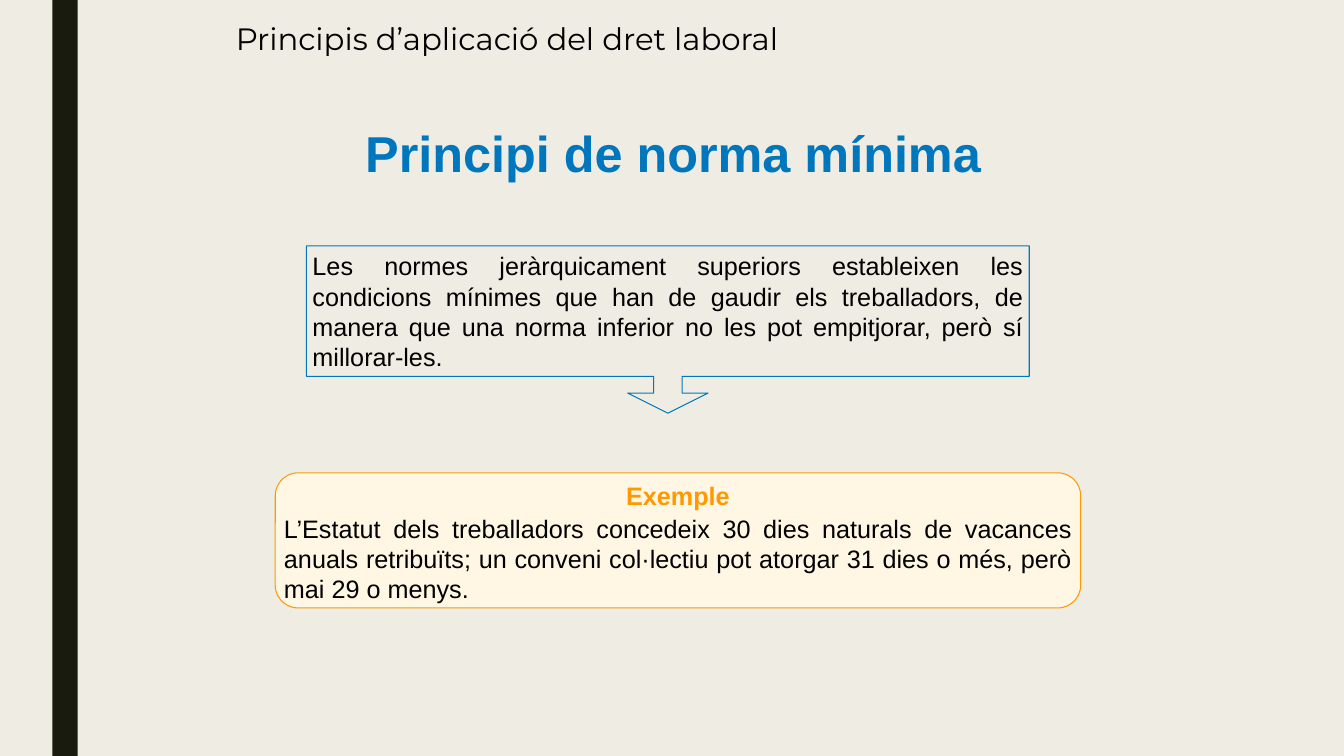
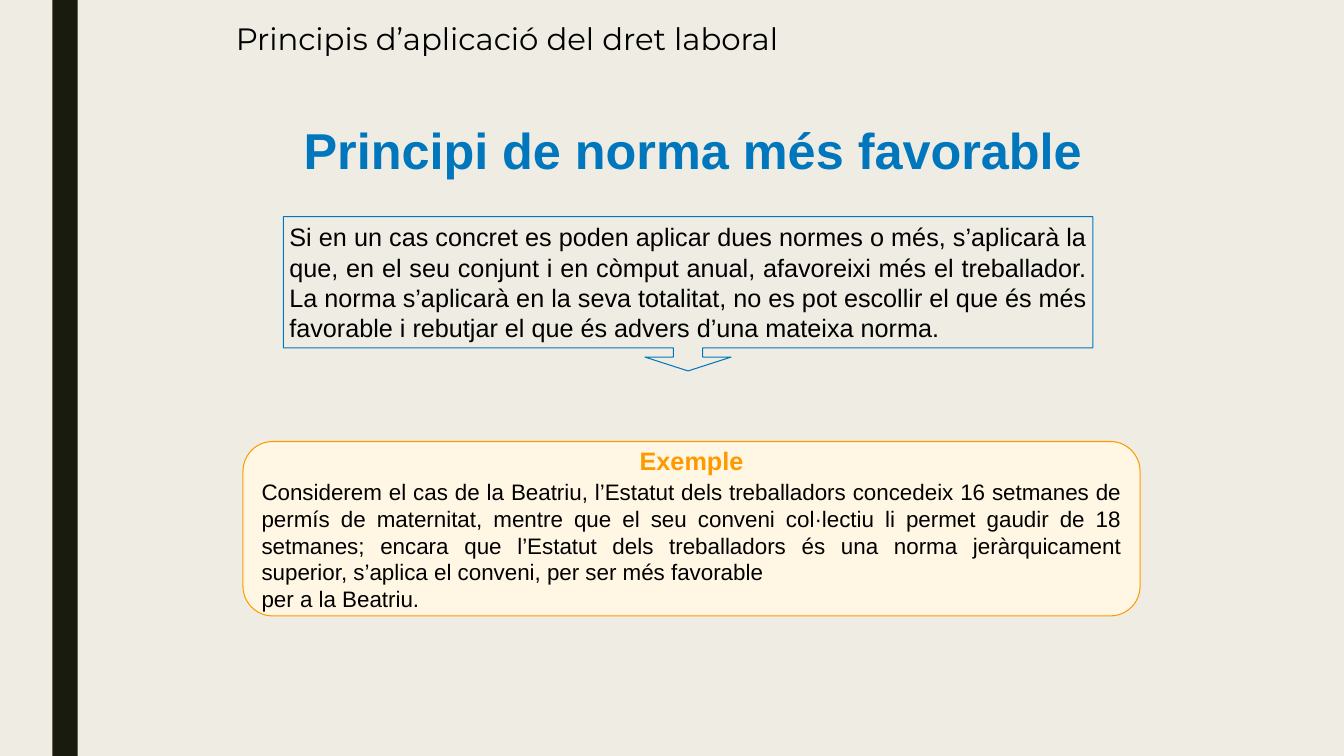
import pptx
import pptx.util
import pptx.dml.color
import pptx.enum.shapes
import pptx.enum.text

Pt = pptx.util.Pt
Inches = pptx.util.Inches
RGBColor = pptx.dml.color.RGBColor
Kind = pptx.enum.shapes.MSO_SHAPE
Align = pptx.enum.text.PP_ALIGN
Anchor = pptx.enum.text.MSO_ANCHOR

CREAM = RGBColor(0xEF, 0xED, 0xE3)
DARK = RGBColor(0x19, 0x1B, 0x0E)
BLACK = RGBColor(0, 0, 0)
BLUE = RGBColor(0x00, 0x77, 0xBD)
ORANGE = RGBColor(0xFF, 0x99, 0x00)
PALE = RGBColor(0xFF, 0xF6, 0xE3)

WIDE, HIGH = Inches(13.33), Inches(7.5)
HEADER = "Principis d’aplicació del dret laboral"
BAND = (3.9, 0, 1.88, 100)
TOP = (17.55, 2.8, 59.2, 5.07)

STYLES = {
    "header": ({"size": Pt(22), "name": "Montserrat"}, BLACK,
               {"line_spacing": 0.9}),
    "title": ({"size": Pt(36), "name": "Arial", "bold": True}, BLUE,
              {"alignment": Align.CENTER}),
    "label": ({"size": Pt(18), "name": "Arial", "bold": True}, ORANGE,
              {"alignment": Align.CENTER, "space_before": Pt(1.8),
               "space_after": Pt(1.8)}),
    "body": ({"size": Pt(18), "name": "Arial"}, BLACK,
             {"alignment": Align.JUSTIFY}),
    "small": ({"size": Pt(16), "name": "Arial"}, BLACK,
              {"alignment": Align.JUSTIFY}),
}

SLIDES = [
    {
        "title": ("Principi de norma mínima", (25.35, 16, 48.75, 8.27)),
        "rule": (
            "Les normes jeràrquicament superiors estableixen les condicions "
            "mínimes que han de gaudir els treballadors, de manera que una "
            "norma inferior no les pot empitjorar, però sí millorar-les.",
            (22.8, 32.53, 53.78, 22.13), (0.17, 0.24, 0.12, 0.78)),
        "case": (
            [("Exemple", "label"),
             ("L’Estatut dels treballadors concedeix 30 dies naturals de "
              "vacances anuals retribuïts; un conveni col·lectiu pot atorgar "
              "31 dies o més, però mai 29 o menys.", "body")],
            (20.48, 62.55, 59.93, 17.87), (0.02, 0.04, 0.02, 0.01)),
    },
    {
        "title": ("Principi de norma més favorable",
                  (19.2, 15.6, 63.98, 8.27)),
        "rule": (
            "Si en un cas concret es poden aplicar dues normes o més, "
            "s’aplicarà la que, en el seu conjunt i en còmput anual, "
            "afavoreixi més el treballador. La norma s’aplicarà en la seva "
            "totalitat, no es pot escollir el que és més favorable i rebutjar "
            "el que és advers d’una mateixa norma.",
            (21.08, 28.67, 60.23, 20.4), (0.19, 0.28, 0.09, 0.85)),
        "case": (
            [("Exemple", "label"),
             ("Considerem el cas de la Beatriu, l’Estatut dels treballadors "
              "concedeix 16 setmanes de permís de maternitat, mentre que el "
              "seu conveni col·lectiu li permet gaudir de 18 setmanes; encara "
              "que l’Estatut dels treballadors és una norma jeràrquicament "
              "superior, s’aplica el conveni, per ser més favorable", "small"),
             ("per a la Beatriu.", "small")],
            (18.08, 58.4, 66.75, 23.07), (0.1, 0.05, 0.1, 0.05)),
    },
]


def assign(target, values):
    for key, value in values.items():
        setattr(target, key, value)


def place(share):
    return [int(full * part / 100)
            for full, part in zip((WIDE, HIGH) * 2, share)]


def write(shape, paras, inset, anchor=Anchor.MIDDLE):
    frame = shape.text_frame
    sides = ("margin_left", "margin_top", "margin_right", "margin_bottom")
    assign(frame, dict(zip(sides, map(Inches, inset))))
    assign(frame, {"word_wrap": True, "vertical_anchor": anchor})
    for i, (text, style) in enumerate(paras):
        para = frame.add_paragraph() if i else frame.paragraphs[0]
        font, ink, layout = STYLES[style]
        run = para.add_run()
        run.text = text
        assign(run.font, font)
        run.font.color.rgb = ink
        assign(para, layout)


def draw(slide, kind, share, fill=None, line=None, adjust=()):
    shape = slide.shapes.add_shape(kind, *place(share))
    shape.shadow.inherit = False
    if fill is None:
        shape.fill.background()
    else:
        shape.fill.solid()
        shape.fill.fore_color.rgb = fill
    if line is None:
        shape.line.fill.background()
    else:
        shape.line.color.rgb = line
        shape.line.width = Pt(0.75)
    for i, value in enumerate(adjust):
        shape.adjustments[i] = value
    return shape


def label(slide, text, share, style, inset, anchor):
    box = slide.shapes.add_textbox(*place(share))
    write(box, [(text, style)], inset, anchor)


def build(deck, page):
    slide = deck.slides.add_slide(deck.slide_layouts[6])
    draw(slide, Kind.RECTANGLE, BAND, DARK)
    label(slide, HEADER, TOP, "header", (0, 0, 0, 0), Anchor.MIDDLE)

    text, share, adjust = page["rule"]
    rule = draw(slide, Kind.DOWN_ARROW_CALLOUT, share, None, BLUE, adjust)
    write(rule, [(text, "body")], (0.06, 0.05, 0.06, 0.05))

    paras, share, inset = page["case"]
    case = draw(slide, Kind.ROUNDED_RECTANGLE, share, PALE, ORANGE, (0.17,))
    write(case, paras, inset)

    text, share = page["title"]
    label(slide, text, share, "title", (0.2, 0.01, 0.1, 0.01), Anchor.TOP)


def main():
    deck = pptx.Presentation()
    assign(deck, {"slide_width": WIDE, "slide_height": HIGH})
    back = deck.slide_master.background.fill
    back.solid()
    back.fore_color.rgb = CREAM
    for page in SLIDES:
        build(deck, page)
    deck.save("out.pptx")


if __name__ == "__main__":
    main()
